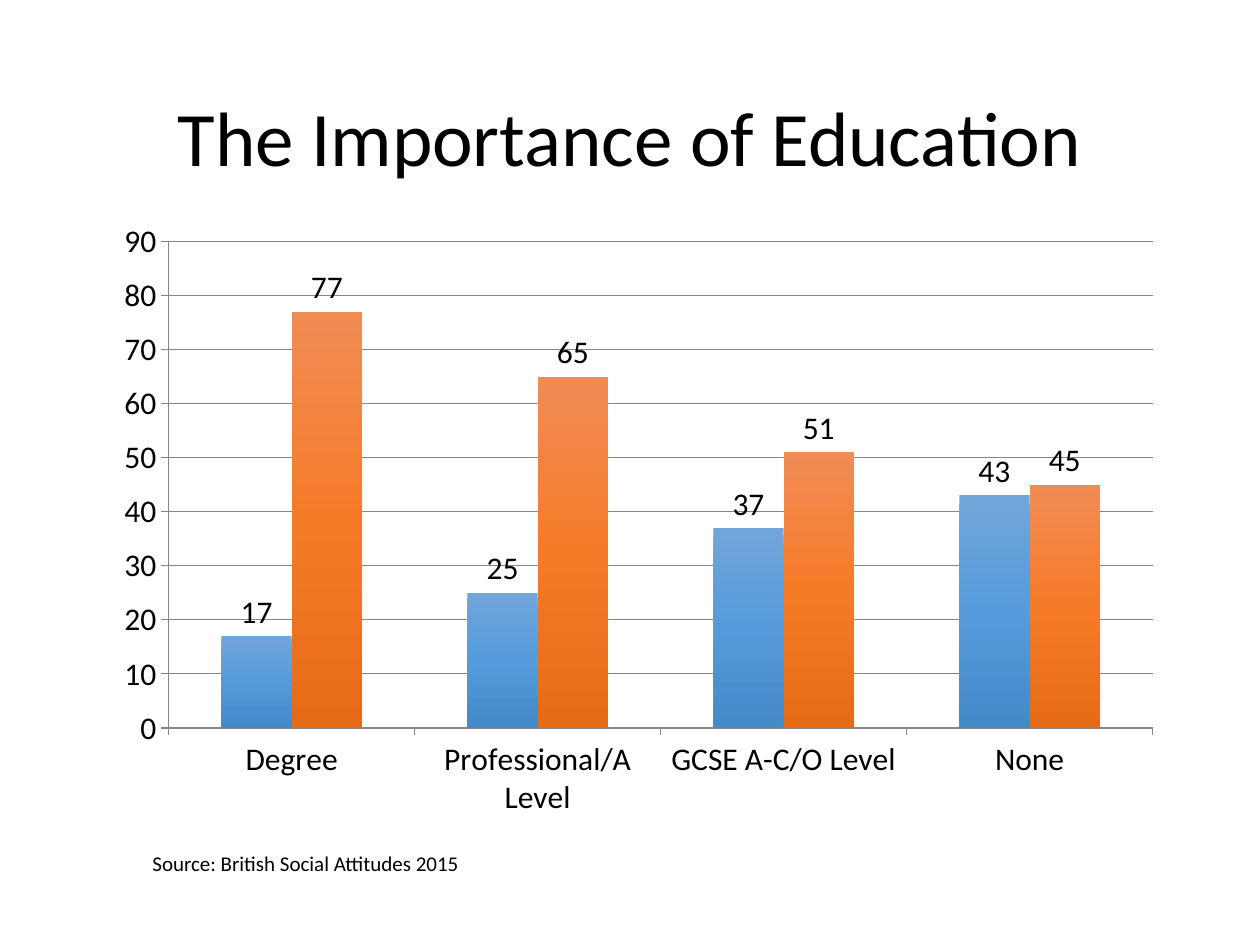
import copy

import pptx
import pptx.chart.data
import pptx.dml.color
import pptx.enum.chart
import pptx.enum.text
import pptx.oxml.ns
import pptx.util

PX = 914400 // 126


def px(*lengths):
    return [pptx.util.Emu(length * PX) for length in lengths]


def color(hex_string):
    return pptx.dml.color.RGBColor.from_string(hex_string)


deck = pptx.Presentation()
deck.slide_width, deck.slide_height = pptx.util.Inches(10), pptx.util.Inches(7.5)
page = deck.slides.add_slide(deck.slide_layouts[5])

# Title
title = page.shapes.title
title.left, title.top, title.width, title.height = px(87, 50, 1086, 183)

# Chart
data = pptx.chart.data.CategoryChartData()
data.categories = ["Degree", "Professional/A Level", "GCSE A-C/O Level", "None"]
data.add_series("Series 1", [17, 25, 37, 43])
data.add_series("Series 2", [77, 65, 51, 45])
chart = page.shapes.add_chart(
    pptx.enum.chart.XL_CHART_TYPE.COLUMN_CLUSTERED, *px(103, 210, 1071, 619), data
).chart
chart.has_legend = False
chart.has_title = False
chart.font.name = "Calibri"
chart.font.size = pptx.util.Pt(18)
chart.font.color.rgb = color("000000")

value_axis = chart.value_axis
value_axis.minimum_scale, value_axis.maximum_scale = 0, 90
value_axis.major_unit = 10
value_axis.has_major_gridlines = True
for line in (
    value_axis.format.line,
    value_axis.major_gridlines.format.line,
    chart.category_axis.format.line,
):
    line.color.rgb = color("868686")
    line.width = pptx.util.Pt(0.75)
for axis in (value_axis, chart.category_axis):
    axis.major_tick_mark = pptx.enum.chart.XL_TICK_MARK.OUTSIDE

plot = chart.plots[0]
plot.gap_width = 150
plot.overlap = 0
plot.vary_by_categories = False
plot.has_data_labels = True
plot.data_labels.show_value = True
plot.data_labels.position = pptx.enum.chart.XL_LABEL_POSITION.OUTSIDE_END

# Each bar shades from top through middle to bottom
shades = [("71A6DB", "559BDB", "438AC9"), ("F18C55", "F67B28", "E56B17")]
for series, bar_shades in zip(plot.series, shades):
    series.invert_if_negative = False
    fill = series.format.fill
    fill.gradient()
    fill.gradient_angle = 270
    stop_list = next(series.format.fill._xPr.iter(pptx.oxml.ns.qn("a:gsLst")))
    stop_list.insert(1, copy.deepcopy(stop_list[0]))
    for stop, position, shade in zip(fill.gradient_stops, (0, 0.5, 1), bar_shades):
        stop.position = position
        stop.color.rgb = color(shade)

# Source note
note = page.shapes.add_textbox(*px(140, 844, 451, 38))
note.text_frame.word_wrap = True
note.text_frame.auto_size = pptx.enum.text.MSO_AUTO_SIZE.SHAPE_TO_FIT_TEXT

title.text_frame.vertical_anchor = pptx.enum.text.MSO_ANCHOR.MIDDLE
title_para = title.text_frame.paragraphs[0]
title_para.alignment = pptx.enum.text.PP_ALIGN.CENTER
title_para.line_spacing = 0.9

for para, text, size in (
    (title_para, "The Importance of Education", 44),
    (note.text_frame.paragraphs[0], "Source: British Social Attitudes 2015", 12),
):
    span = para.add_run()
    span.text = text
    span.font.name = "Calibri"
    span.font.size = pptx.util.Pt(size)
    span.font.color.rgb = color("000000")

deck.save("out.pptx")
